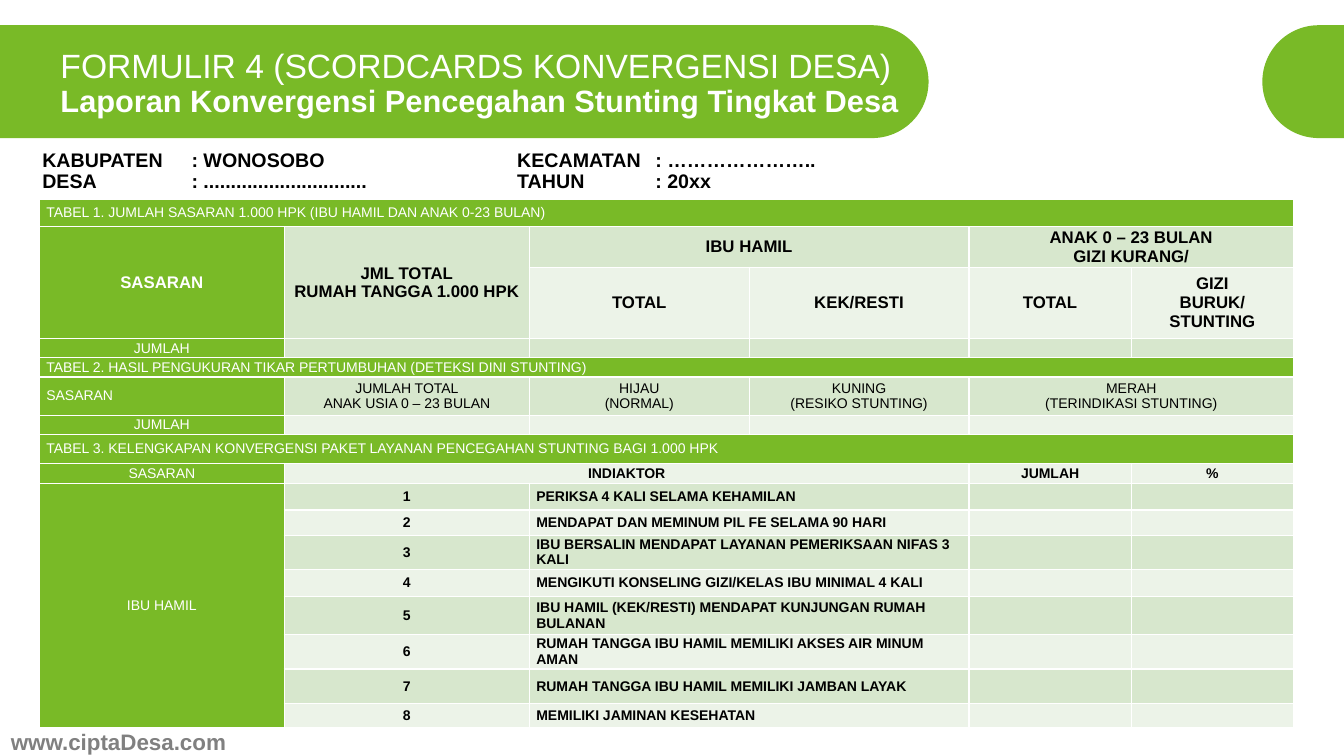
from dataclasses import dataclass
from math import cos, pi, sin

from lxml.etree import SubElement
from pptx import Presentation
from pptx.dml.color import RGBColor
from pptx.enum.text import MSO_ANCHOR as Anchor, MSO_AUTO_SIZE as AutoSize, PP_ALIGN as Align
from pptx.oxml.ns import qn
from pptx.util import Pt

TITLE = [("FORMULIR 4 (SCORDCARDS KONVERGENSI DESA) ", 24, False),
         ("Laporan Konvergensi Pencegahan Stunting Tingkat Desa", 22, True)]
DETAILS = ["KABUPATEN\t: WONOSOBO\tKECAMATAN \t: …………………..",
           "DESA\t: ..............................\tTAHUN \t: 20xx"]
DETAIL_TABS = [148, 471, 608]
WEBSITE = "www.ciptaDesa.com"

INDICATORS = [
    (26, "PERIKSA 4 KALI SELAMA KEHAMILAN"),
    (25, "MENDAPAT DAN MEMINUM PIL FE SELAMA 90 HARI"),
    (34, "IBU BERSALIN MENDAPAT LAYANAN PEMERIKSAAN NIFAS 3 KALI"),
    (27, "MENGIKUTI KONSELING GIZI/KELAS IBU MINIMAL 4 KALI"),
    (38, "IBU HAMIL (KEK/RESTI) MENDAPAT KUNJUNGAN RUMAH BULANAN"),
    (34, "RUMAH TANGGA IBU HAMIL MEMILIKI AKSES AIR MINUM AMAN"),
    (34, "RUMAH TANGGA IBU HAMIL MEMILIKI JAMBAN LAYAK"),
    (24, "MEMILIKI JAMINAN KESEHATAN"),
]
ROWS = [
    (27, "title", {0: "TABEL 1. JUMLAH SASARAN 1.000 HPK (IBU HAMIL DAN ANAK 0-23 BULAN)"}),
    (39, "head", {0: "SASARAN", 1: "JML TOTAL\nRUMAH TANGGA 1.000 HPK", 2: "IBU HAMIL",
                  4: "ANAK 0 – 23 BULAN\nGIZI KURANG/"}),
    (71, "head", {2: "TOTAL", 3: "KEK/RESTI", 4: "TOTAL", 5: "GIZI\nBURUK/\nSTUNTING"}),
    (19, "plain", {0: "JUMLAH"}),
    (19, "title", {0: "TABEL 2. HASIL PENGUKURAN TIKAR PERTUMBUHAN (DETEKSI DINI STUNTING)"}),
    (38, "plain", {0: "SASARAN", 1: "JUMLAH TOTAL\nANAK USIA 0 – 23 BULAN", 2: "HIJAU\n(NORMAL)",
                   3: "KUNING\n(RESIKO STUNTING)", 4: "MERAH\n(TERINDIKASI STUNTING)"}),
    (19, "plain", {0: "JUMLAH"}),
    (29, "title", {0: "TABEL 3. KELENGKAPAN KONVERGENSI PAKET LAYANAN PENCEGAHAN STUNTING BAGI 1.000 HPK"}),
    (20, "strong", {0: "SASARAN", 1: "INDIAKTOR", 4: "JUMLAH", 5: "%"}),
]
FIRST_INDICATOR = len(ROWS)
ROWS += [(height, "strong", {1: str(number), 2: text})
         for number, (height, text) in enumerate(INDICATORS, 1)]
ROWS[FIRST_INDICATOR][2][0] = "IBU HAMIL"
LAST_ROW = len(ROWS) - 1
COLUMNS = [243, 243, 218, 218, 161, 161]
MERGES = [(1, 0, 2, 0), (1, 1, 2, 1), (1, 2, 1, 3), (1, 4, 1, 5), (5, 4, 5, 5), (6, 4, 6, 5),
          (8, 1, 8, 3), (FIRST_INDICATOR, 0, LAST_ROW, 0)]
MERGES += [(row, 0, row, 5) for row, (_, kind, _) in enumerate(ROWS) if kind == "title"]
MERGES += [(row, 2, row, 3) for row in range(FIRST_INDICATOR, LAST_ROW + 1)]
LEFT_CELLS = {(5, 0)} | {(row, 2) for row in range(FIRST_INDICATOR, LAST_ROW + 1)}
DARK_BAND_ROWS = {1, 3, 5} | set(range(FIRST_INDICATOR, LAST_ROW + 1, 2))


@dataclass(frozen=True)
class Theme:
    font: str = "Arial"
    green: str = "79BA27"
    dark_band: str = "D7E7CD"
    light_band: str = "ECF3E8"
    white: str = "FFFFFF"
    black: str = "000000"
    grey: str = "808080"
    website: int = 16
    details: int = 14
    head: int = 12
    cell: int = 10


theme = Theme()
PX = 9144
FINE = 100


def px(length):
    return length * PX


def add_span(para, text, size, color, bold):
    span = para.add_run()
    span.text = text
    span.font.name = theme.font
    span.font.size = Pt(size)
    span.font.bold = bold
    span.font.color.rgb = RGBColor.from_string(color)


def add_banner(page, flat_x, center_x, direction):
    top, radius = 25, 56
    middle = top + radius
    arc = [(center_x + direction * radius * cos(angle), middle + radius * sin(angle))
           for angle in (-pi / 2 + pi * step / 48 for step in range(49))]
    outline = [(x * FINE, y * FINE) for x, y in arc + [(flat_x, top + 2 * radius)]]
    builder = page.shapes.build_freeform(flat_x * FINE, top * FINE, scale=PX / FINE)
    builder.add_line_segments(outline, close=True)
    banner = builder.convert_to_shape()
    banner.shadow.inherit = False
    banner.fill.solid()
    banner.fill.fore_color.rgb = RGBColor.from_string(theme.green)
    banner.line.fill.background()


def add_title(page):
    title = page.shapes.title
    title.left, title.top, title.width, title.height = map(px, (50, 44, 859, 79))
    frame = title.text_frame
    frame.auto_size = AutoSize.NONE
    frame.vertical_anchor = Anchor.MIDDLE
    para = frame.paragraphs[0]
    para.alignment = Align.LEFT
    para.line_spacing = 0.9
    for index, (text, size, bold) in enumerate(TITLE):
        if index:
            para.add_line_break()
        add_span(para, text, size, theme.white, bold)


def add_website(page):
    frame = page.shapes.add_textbox(*map(px, (0, 722, 235, 28))).text_frame
    frame.word_wrap = False
    frame.margin_top = frame.margin_bottom = 0
    para = frame.paragraphs[0]
    para.alignment = Align.CENTER
    add_span(para, WEBSITE, theme.website, theme.grey, True)


def add_details(page):
    frame = page.shapes.add_textbox(*map(px, (42, 130, 1244, 66))).text_frame
    frame.word_wrap = True
    frame.vertical_anchor = Anchor.BOTTOM
    frame.margin_left = frame.margin_right = 0
    for index, text in enumerate(DETAILS):
        para = frame.add_paragraph() if index else frame.paragraphs[0]
        para.line_spacing = 0.9
        stops = SubElement(para._p.get_or_add_pPr(), qn("a:tabLst"))
        for position in DETAIL_TABS:
            SubElement(stops, qn("a:tab"), pos=str(px(position)), algn="l")
        add_span(para, text, theme.details, theme.black, True)


def style_cell(cell, fill):
    properties = cell._tc.get_or_add_tcPr()
    for side in ("lnL", "lnR", "lnT", "lnB"):
        border = SubElement(properties, qn(f"a:{side}"), w=str(Pt(1)))
        SubElement(SubElement(border, qn("a:solidFill")), qn("a:srgbClr"), val=theme.white)
    cell.fill.solid()
    cell.fill.fore_color.rgb = RGBColor.from_string(fill)
    cell.vertical_anchor = Anchor.MIDDLE
    cell.margin_left = cell.margin_right = px(7)
    cell.margin_top = cell.margin_bottom = 0


def fill_cell(cell, text, size, color, bold, align):
    for index, line in enumerate(text.split("\n")):
        para = cell.text_frame.add_paragraph() if index else cell.text_frame.paragraphs[0]
        para.alignment = align
        para.line_spacing = 1.0
        if line:
            add_span(para, line, size, color, bold)
        else:
            SubElement(para._p, qn("a:endParaRPr"), sz=str(size * 100))


def add_scorecard(page):
    heights = [height for height, _, _ in ROWS]
    table = page.shapes.add_table(len(ROWS), len(COLUMNS), px(39), px(198),
                                  px(sum(COLUMNS)), px(sum(heights))).table
    table.first_row = table.horz_banding = False
    for column, width in zip(table.columns, COLUMNS):
        column.width = px(width)
    for row, (height, kind, texts) in enumerate(ROWS):
        table.rows[row].height = px(height)
        band = theme.dark_band if row in DARK_BAND_ROWS else theme.light_band
        size = theme.head if kind == "head" else theme.cell
        for column in range(len(COLUMNS)):
            green = column == 0 or kind == "title"
            bold = kind == "head" or (kind == "strong" and not green)
            left = kind == "title" or (row, column) in LEFT_CELLS
            cell = table.cell(row, column)
            style_cell(cell, theme.green if green else band)
            fill_cell(cell, texts.get(column, ""), size, theme.white if green else theme.black,
                      bold, Align.LEFT if left else Align.CENTER)
    for top, left, bottom, right in MERGES:
        table.cell(top, left).merge(table.cell(bottom, right))


def main():
    deck = Presentation()
    deck.slide_width, deck.slide_height = px(1333), px(750)
    page = deck.slides.add_slide(deck.slide_layouts[5])
    add_banner(page, 0, 865, 1)
    add_banner(page, 1333, 1308, -1)
    title = page.shapes.title._element
    title.getparent().append(title)
    add_title(page)
    add_website(page)
    add_details(page)
    add_scorecard(page)
    deck.save("out.pptx")


if __name__ == "__main__":
    main()
